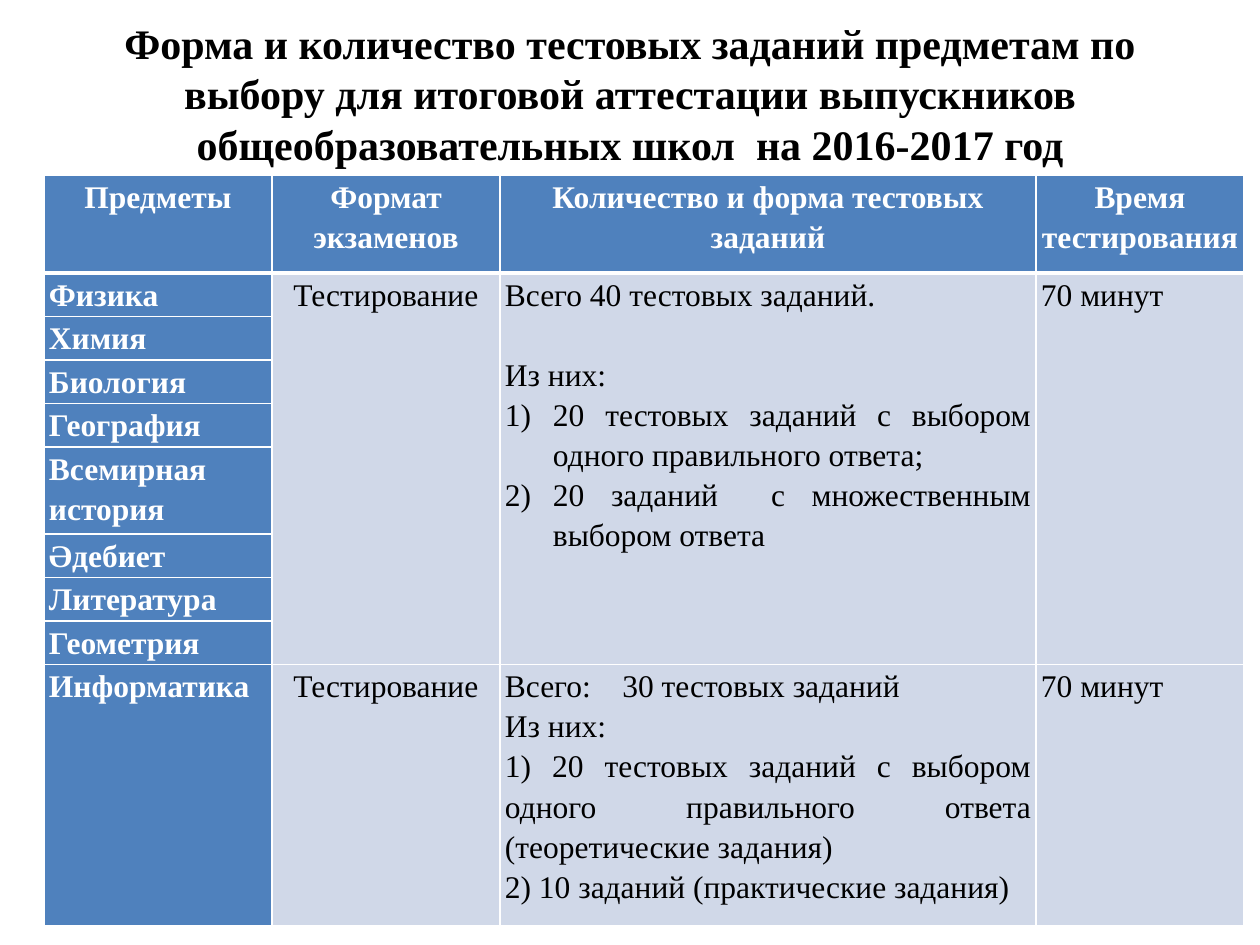
from lxml.etree import SubElement as Sub
from pptx import Presentation
from pptx.dml.color import RGBColor as RGB
from pptx.enum.text import MSO_ANCHOR as Anchor, PP_ALIGN as Align
from pptx.oxml import parse_xml
from pptx.oxml.ns import nsdecls, qn
from pptx.util import Emu, Pt

FONT = "Times New Roman"
COLORS = {"head": "4F81BD", "body": "D0D8E8", "white": "FFFFFF", "black": "000000"}
C, J, L = Align.CENTER, Align.JUSTIFY, Align.LEFT

# Content
TITLE = ("Форма и количество тестовых заданий предметам по выбору для итоговой "
         "аттестации выпускников общеобразовательных школ  на 2016-2017 год")
HEADS = ["Предметы", "Формат экзаменов", "Количество и форма тестовых заданий",
         "Время тестирования"]
SUBJECTS = ["Физика", "Химия", "Биология", "География", "Всемирная история",
            "Әдебиет", "Литература", "Геометрия", "Информатика"]
EXAM, TIME = "Тестирование", "70 минут"
# Each line: text, alignment, numbered, space before in points
TASKS = {
    1: [("Всего 40 тестовых заданий.", L, False, 0),
        ("Из них:", L, False, 23),
        ("20 тестовых заданий с выбором одного правильного ответа; ", J, True, 0),
        ("20 заданий  с множественным выбором ответа", J, True, 0)],
    9: [("Всего:    30 тестовых заданий", L, False, 0),
        ("Из них:", L, False, 0),
        ("1) 20 тестовых заданий с выбором одного правильного ответа "
         "(теоретические задания)", J, False, 0),
        ("2) 10 заданий (практические задания)", J, False, 0)],
}
COLS = [228, 228, 536, 208]
LINE = 40
ROWS = [98] + [LINE * n for n in (1, 1, 1, 1, 2, 1, 1, 1, 6)]


def px(n):
    return Emu(n * 914400 // 126)


def add_run(para, text, size, color, bold):
    run = para.add_run()
    run.text = text
    font = run.font
    font.name, font.size, font.bold = FONT, Pt(size), bold
    font.color.rgb = RGB.from_string(COLORS[color])


def number(para):
    props = para._p.get_or_add_pPr()
    props.set("marL", str(px(48)))
    props.set("indent", str(-px(48)))
    Sub(props, qn("a:buFont"), typeface="+mj-lt")
    Sub(props, qn("a:buAutoNum"), type="arabicParenR")


def edge(cell, head):
    props = cell._tc.get_or_add_tcPr()
    for i, side in enumerate("LRTB"):
        width = Pt(3 if head and side == "B" else 1)
        props.insert(i, parse_xml(
            f'<a:ln{side} {nsdecls("a")} w="{width}"><a:solidFill>'
            f'<a:srgbClr val="{COLORS["white"]}"/></a:solidFill></a:ln{side}>'))


def fill_cell(cell, lines, dark):
    cell.margin_left = cell.margin_right = px(5)
    cell.margin_top = cell.margin_bottom = 0
    frame = cell.text_frame
    for i, (text, align, numbered, gap) in enumerate(lines):
        para = frame.add_paragraph() if i else frame.paragraphs[0]
        para.alignment, para.line_spacing = align, 1.15
        if gap:
            para.space_before = Pt(gap)
        if numbered:
            number(para)
        add_run(para, text, 18, "white" if dark else "black", dark)


deck = Presentation()
deck.slide_width, deck.slide_height = px(1260), px(945)
slide = deck.slides.add_slide(deck.slide_layouts[6])

# Title
box = slide.shapes.add_textbox(px(63), px(38), px(1134), px(158))
frame = box.text_frame
frame.word_wrap = True
frame.vertical_anchor = Anchor.MIDDLE
frame.margin_top, frame.margin_bottom = 0, px(48)
para = frame.paragraphs[0]
para.alignment, para.line_spacing = C, Pt(29)
add_run(para, TITLE, 24, "black", True)

# Table grid
table = slide.shapes.add_table(len(ROWS), len(COLS), px(44), px(175),
                               px(sum(COLS)), px(sum(ROWS))).table
for col, width in zip(table.columns, COLS):
    col.width = px(width)
for row, height in zip(table.rows, ROWS):
    row.height = px(height)
for r in range(len(ROWS)):
    for c in range(len(COLS)):
        cell = table.cell(r, c)
        edge(cell, r == 0)
        cell.fill.solid()
        shade = "head" if r == 0 or c == 0 else "body"
        cell.fill.fore_color.rgb = RGB.from_string(COLORS[shade])
for c in (1, 2, 3):
    table.cell(1, c).merge(table.cell(8, c))

# Table text
for c, text in enumerate(HEADS):
    fill_cell(table.cell(0, c), [(text, C, False, 0)], True)
for r, text in enumerate(SUBJECTS, 1):
    fill_cell(table.cell(r, 0), [(text, L, False, 0)], True)
for r, tasks in TASKS.items():
    fill_cell(table.cell(r, 1), [(EXAM, C, False, 0)], False)
    fill_cell(table.cell(r, 2), tasks, False)
    fill_cell(table.cell(r, 3), [(TIME, L, False, 0)], False)

deck.save("out.pptx")
